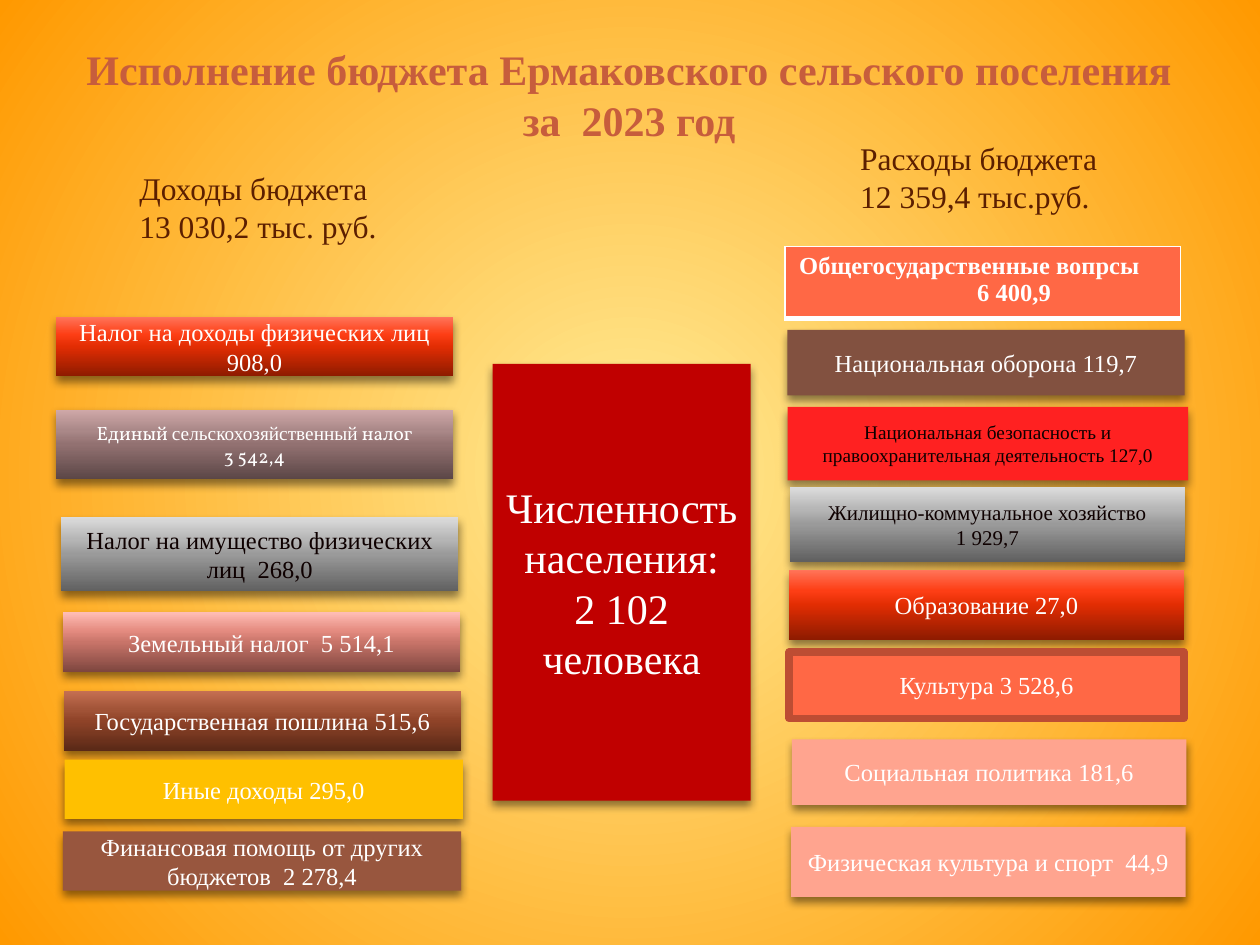
from lxml.etree import SubElement
from pptx import Presentation
from pptx.dml.color import RGBColor
from pptx.enum.shapes import MSO_SHAPE as Shape
from pptx.enum.text import MSO_ANCHOR as Anchor, PP_ALIGN as Align
from pptx.oxml import parse_xml
from pptx.oxml.ns import nsdecls, qn
from pptx.util import Pt

SERIF = "Times New Roman"
ACCENT_FONT = "Vollkorn"

WHITE = RGBColor(0xFF, 0xFF, 0xFF)
BLACK = RGBColor(0x0E, 0x00, 0x00)
HEADING_BROWN = RGBColor(0x5C, 0x1F, 0x00)
TITLE_RUST = RGBColor(0xC7, 0x5D, 0x3C)
RUST = RGBColor(0x98, 0x56, 0x3E)
AMBER = RGBColor(0xFF, 0xC0, 0x00)
BROWN = RGBColor(0x82, 0x51, 0x40)
RED = RGBColor(0xFF, 0x21, 0x21)
DARK_RED = RGBColor(0xC0, 0x00, 0x00)
CORAL = RGBColor(0xFF, 0x68, 0x45)
CORAL_EDGE = RGBColor(0xBD, 0x4D, 0x33)
SALMON = RGBColor(0xFF, 0xA4, 0x8F)


def gradient(*colors):
    """Pair four colours, from bottom to top, with the common stops."""
    return list(zip((0, 50, 70, 100), map(RGBColor.from_string, colors)))


RED_GRADIENT = gradient("8E1B00", "E22D03", "FD3E15", "FF755A")
MAUVE_GRADIENT = gradient("5B4646", "927171", "AA8888", "CFA8A8")
GREY_GRADIENT = gradient("606060", "9A9A9A", "B5B5B5", "DCDCDC")
ROSE_GRADIENT = gradient("7E463F", "C87469", "E58C81", "FFBDB5")
SIENNA_GRADIENT = gradient("5A2917", "8F4328", "A25438", "C56F52")
BACKGROUND = [(0, RGBColor(0xFF, 0xEC, 0x97)), (100, RGBColor(0xFF, 0x99, 0x00))]

UPWARD = '<a:lin ang="16200000" scaled="0"/>'
RADIAL = ('<a:path path="circle"><a:fillToRect l="50000" t="50000" '
          'r="50000" b="50000"/></a:path>')

# text, left, top, width, height, fill, font size, font colour
INCOMES = [
    ("Налог на доходы физических лиц 908,0", 32, 181, 227, 34, RED_GRADIENT, 14, WHITE),
    ("Налог на имущество физических лиц  268,0", 35, 295.5, 227, 42.5,
     GREY_GRADIENT, 14, BLACK),
    ("Земельный налог  5 514,1", 36, 350, 227, 34, ROSE_GRADIENT, 14, WHITE),
    ("Государственная пошлина 515,6", 36.5, 395, 227, 34, SIENNA_GRADIENT, 14, WHITE),
    ("Иные доходы 295,0", 37, 434, 227.5, 34, AMBER, 14, WHITE),
    ("Финансовая помощь от других бюджетов  2 278,4", 36, 475, 227.5, 34,
     RUST, 14, WHITE),
]
EXPENSES = [
    ("Национальная оборона 119,7", 450, 188.5, 227, 37.5, BROWN, 14, WHITE),
    ("Национальная безопасность и правоохранительная деятельность 127,0",
     450, 232.5, 229, 42, RED, 11, BLACK),
    ("Жилищно-коммунальное хозяйство\n1 929,7", 451.5, 278.5, 225.5, 42.5,
     GREY_GRADIENT, 12, BLACK),
    ("Образование 27,0", 451, 325.5, 225.5, 40, RED_GRADIENT, 14, WHITE),
    ("Социальная политика 181,6", 452.5, 422.5, 225.5, 37.5, SALMON, 14, WHITE),
    ("Физическая культура и спорт  44,9", 452, 472.5, 225.5, 40, SALMON, 14, WHITE),
]
POPULATION = ("Численность населения:\n2 102\nчеловека",
              281.5, 208, 147.5, 249.5, DARK_RED, 24, WHITE)


def style_paragraph(paragraph, size, color, align, bold=False):
    paragraph.alignment = align
    font = paragraph.font
    font.name, font.size, font.bold = SERIF, Pt(size), bold
    font.color.rgb = color


def write_text(text_frame, text, size, color, align, bold=False):
    text_frame.word_wrap = True
    text_frame.text = text
    for paragraph in text_frame.paragraphs:
        style_paragraph(paragraph, size, color, align, bold)


def apply_gradient(fill, element, stops, direction):
    """Swap the solid fill inside the element for a gradient."""
    fill.solid()
    fill.fore_color.rgb = WHITE
    stops_xml = "".join(f'<a:gs pos="{position * 1000}"><a:srgbClr val="{color}"/></a:gs>'
                        for position, color in stops)
    solid = element.find(qn("a:solidFill"))
    solid.getparent().replace(solid, parse_xml(
        f'<a:gradFill {nsdecls("a")} rotWithShape="1">'
        f'<a:gsLst>{stops_xml}</a:gsLst>{direction}</a:gradFill>'))


def add_drop_shadow(shape):
    effects = shape.element.spPr.find(qn("a:effectLst"))
    shadow = SubElement(effects, qn("a:outerShdw"), blurRad=str(Pt(5)),
                        dist=str(Pt(3)), dir="5400000", rotWithShape="0")
    color = SubElement(shadow, qn("a:srgbClr"), val="000000")
    SubElement(color, qn("a:alpha"), val="45000")


def add_box(slide, text, left, top, width, height, fill, size, color):
    shape = slide.shapes.add_shape(Shape.RECTANGLE, Pt(left), Pt(top), Pt(width), Pt(height))
    shape.line.fill.background()
    shape.shadow.inherit = False
    if isinstance(fill, list):
        apply_gradient(shape.fill, shape.element.spPr, fill, UPWARD)
    else:
        shape.fill.solid()
        shape.fill.fore_color.rgb = fill
    shape.text_frame.vertical_anchor = Anchor.MIDDLE
    write_text(shape.text_frame, text, size, color, Align.CENTER)
    return shape


def add_shadowed_box(slide, *box):
    shape = add_box(slide, *box)
    add_drop_shadow(shape)
    return shape


def add_agricultural_tax(slide):
    """Add the income box that mixes two fonts."""
    shape = add_shadowed_box(slide, "\n3 542,4", 32, 234, 227, 40,
                             MAUVE_GRADIENT, 11, WHITE)
    name, amount = shape.text_frame.paragraphs
    amount.font.name = ACCENT_FONT
    for text, font_name in (("Единый ", ACCENT_FONT), ("сельскохозяйственный", SERIF),
                            (" налог", ACCENT_FONT)):
        run = name.add_run()
        run.text, run.font.name = text, font_name


def add_culture(slide):
    shape = add_box(slide, "Культура 3 528,6", 451, 372.5, 225.5, 38, CORAL, 14, WHITE)
    shape.line.color.rgb = CORAL_EDGE
    shape.line.width = Pt(4.33)


def add_label(slide, text, left, top, width, height, size, color,
              align=Align.LEFT, bold=False):
    box = slide.shapes.add_textbox(Pt(left), Pt(top), Pt(width), Pt(height))
    write_text(box.text_frame, text, size, color, align, bold)


def add_state_matters_table(slide):
    table = slide.shapes.add_table(1, 1, Pt(448.5), Pt(141), Pt(226), Pt(39)).table
    cell = table.cell(0, 0)
    write_text(cell.text_frame, "Общегосударственные вопрсы\n6 400,9",
               14, WHITE, Align.CENTER, bold=True)
    name, amount = cell.text_frame.paragraphs
    name._p.get_or_add_pPr().set("marR", str(Pt(15)))
    amount._p.get_or_add_pPr().set("marL", str(Pt(51)))
    properties = cell._tc.get_or_add_tcPr()
    for side, width in (("L", 1), ("R", 1), ("T", 1), ("B", 3)):
        border = SubElement(properties, qn(f"a:ln{side}"), w=str(Pt(width)))
        SubElement(SubElement(border, qn("a:solidFill")), qn("a:srgbClr"), val=str(WHITE))
    cell.fill.solid()
    cell.fill.fore_color.rgb = CORAL


def main():
    presentation = Presentation()
    presentation.slide_width, presentation.slide_height = Pt(720), Pt(540)
    slide = presentation.slides.add_slide(presentation.slide_layouts[6])
    background_fill = slide.background.fill
    background_fill.solid()
    apply_gradient(background_fill, slide.element.find(f".//{qn('p:bgPr')}"),
                   BACKGROUND, RADIAL)

    add_label(slide, "Исполнение бюджета Ермаковского сельского поселения за  2023 год",
              39, 21.5, 641, 65.5, 24, TITLE_RUST, Align.CENTER, bold=True)
    add_label(slide, "Доходы бюджета\n13 030,2 тыс. руб.", 72.5, 93, 156, 51,
              18, HEADING_BROWN)
    add_label(slide, "Расходы бюджета\n12 359,4 тыс.руб.", 484.5, 76, 222, 68,
              18, HEADING_BROWN)

    for box in [*INCOMES, *EXPENSES, POPULATION]:
        add_shadowed_box(slide, *box)
    add_agricultural_tax(slide)
    add_culture(slide)
    add_state_matters_table(slide)

    presentation.save("out.pptx")


if __name__ == "__main__":
    main()
